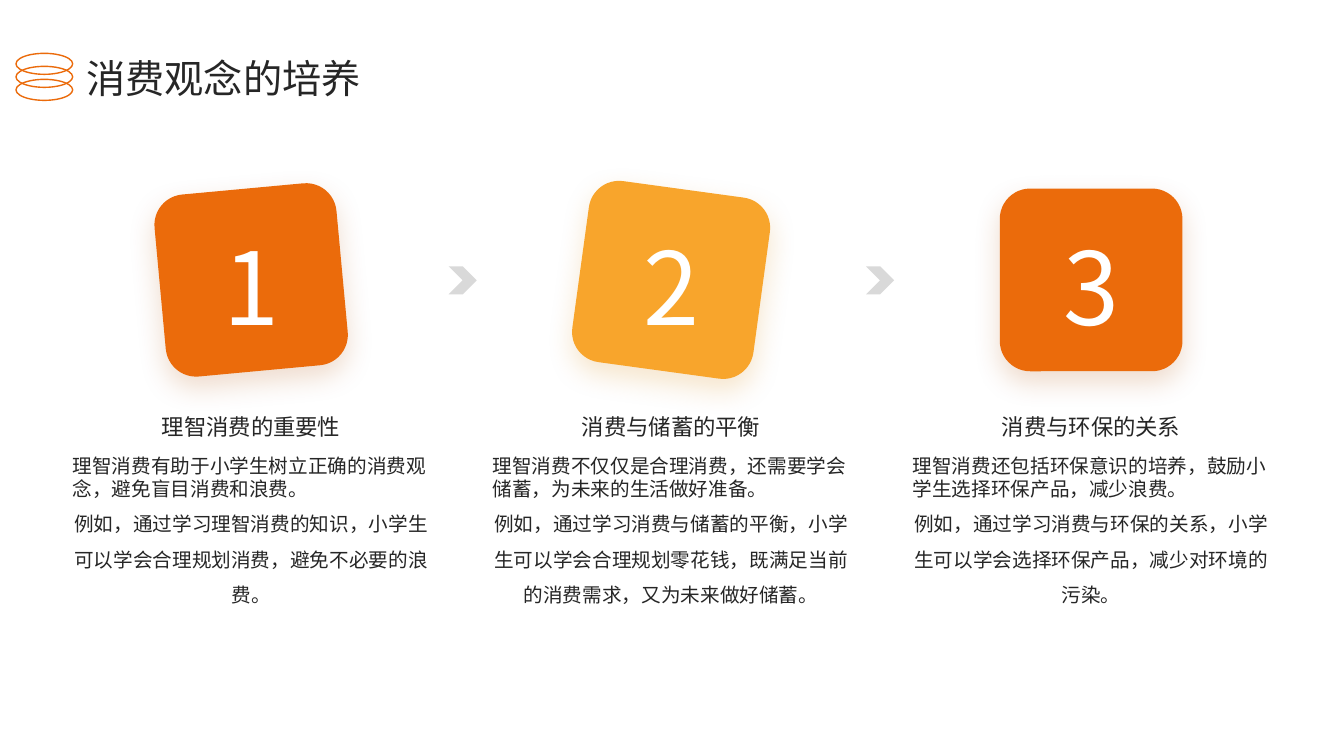
from dataclasses import dataclass

from lxml import etree
from pptx import Presentation
from pptx import util as u
from pptx.dml.color import RGBColor
from pptx.enum import shapes, text
from pptx.oxml import ns

FONT = "Noto Sans CJK SC"
INK = {"dark": "262626", "white": "FFFFFF", "grey": "D9D9D9",
       "orange": "EB6B0B", "amber": "F8A52C",
       "rust": "B05008", "ochre": "D48107"}
KIND = shapes.MSO_SHAPE
LEFT, MID = text.PP_ALIGN.LEFT, text.PP_ALIGN.CENTER

# The slide is a grid of 32 columns by 18 rows of square cells.
COLS, ROWS = 32, 18
WIDE, HIGH = u.Inches(13.333), u.Inches(7.5)
FIRST, STEP = 5.98, 10  # centre of the first card, and pitch of the cards


@dataclass
class Box:
    left: float
    top: float
    wide: float
    high: float

    def size(self) -> tuple[int, int, int, int]:
        """Turn grid cells into slide units."""
        return (round(self.left * WIDE / COLS), round(self.top * HIGH / ROWS),
                round(self.wide * WIDE / COLS), round(self.high * HIGH / ROWS))


@dataclass
class Card:
    head: str
    claim: str
    case: str
    fill: str
    shade: str
    turn: float


CARDS = [
    Card("理智消费的重要性",
         "理智消费有助于小学生树立正确的消费观念，避免盲目消费和浪费。",
         "例如，通过学习理智消费的知识，小学生可以学会合理规划消费，避免不必要的浪费。",
         "orange", "rust", 354.7),
    Card("消费与储蓄的平衡",
         "理智消费不仅仅是合理消费，还需要学会储蓄，为未来的生活做好准备。",
         "例如，通过学习消费与储蓄的平衡，小学生可以学会合理规划零花钱，既满足当前的消费需求，又为未来做好储蓄。",
         "amber", "ochre", 7.8),
    Card("消费与环保的关系",
         "理智消费还包括环保意识的培养，鼓励小学生选择环保产品，减少浪费。",
         "例如，通过学习消费与环保的关系，小学生可以学会选择环保产品，减少对环境的污染。",
         "orange", "rust", 0),
]


def tint(name: str) -> RGBColor:
    return RGBColor.from_string(INK[name])


def write(frame, words: str, size: float, ink: str = "dark", align=MID,
          lead: float = 1.1, more: bool = False) -> None:
    """Fill the frame's first paragraph, or add one when more is set."""
    para = frame.add_paragraph() if more else frame.paragraphs[0]
    para.alignment, para.line_spacing = align, lead
    run = para.add_run()
    run.text = words
    run.font.size, run.font.name = u.Pt(size), FONT
    run.font.color.rgb = tint(ink)
    east = etree.SubElement(run.font._element, ns.qn("a:ea"))
    east.set("typeface", FONT)


def frame_of(shape, anchor=text.MSO_ANCHOR.TOP):
    """Return the shape's text frame, wrapped and without margins."""
    frame = shape.text_frame
    frame.word_wrap, frame.auto_size = True, text.MSO_AUTO_SIZE.NONE
    frame.vertical_anchor = anchor
    frame.margin_left = frame.margin_right = 0
    frame.margin_top = frame.margin_bottom = 0
    return frame


def draw(parent, kind, box: Box, fill: str = "", line: str = ""):
    shape = parent.shapes.add_shape(kind, *box.size())
    shape.shadow.inherit = False
    if fill:
        shape.fill.solid()
        shape.fill.fore_color.rgb = tint(fill)
    else:
        shape.fill.background()
    if line:
        shape.line.color.rgb, shape.line.width = tint(line), u.Pt(1)
    else:
        shape.line.fill.background()
    return shape


def shade(shape, ink: str) -> None:
    """Cast a soft shadow straight down."""
    glow = shape._element.spPr.find(ns.qn("a:effectLst"))
    cast = etree.SubElement(glow, ns.qn("a:outerShdw"), blurRad=str(u.Pt(20)),
                            dist=str(u.Pt(8)), dir="5400000", algn="t",
                            rotWithShape="0")
    tone = etree.SubElement(cast, ns.qn("a:srgbClr"), val=INK[ink])
    etree.SubElement(tone, ns.qn("a:alpha"), val="20000")


def add_card(slide, rank: int, card: Card) -> None:
    def place(top: float, wide: float, high: float) -> Box:
        return Box(FIRST + STEP * rank - wide / 2, top, wide, high)

    def panel(box: Box, anchor=text.MSO_ANCHOR.TOP):
        return frame_of(slide.shapes.add_textbox(*box.size()), anchor)

    tile = draw(slide, KIND.ROUNDED_RECTANGLE, place(4.49, 4.35, 4.35), card.fill)
    tile.rotation = card.turn
    shade(tile, card.shade)
    body = panel(place(10.8, 8.5, 4.42))
    write(body, card.claim, 14, align=LEFT, lead=1.0)
    write(body, card.case, 14, lead=1.5, more=True)
    write(panel(place(9.77, 8.5, 1)), card.head, 16)
    digit = panel(place(5.2, 3.17, 2.9), text.MSO_ANCHOR.MIDDLE)
    write(digit, str(rank + 1), 72, ink="white")


def main() -> None:
    deck = Presentation()
    deck.slide_width, deck.slide_height = WIDE, HIGH
    slide = deck.slides.add_slide(deck.slide_layouts[5])

    title = slide.shapes.title
    title.left, title.top, title.width, title.height = Box(2.06, 1.18, 28, 1.22).size()
    write(frame_of(title, text.MSO_ANCHOR.MIDDLE), "消费观念的培养", 28, align=LEFT)

    for rank, card in enumerate(CARDS):
        add_card(slide, rank, card)
    for gap in range(len(CARDS) - 1):
        draw(slide, KIND.CHEVRON, Box(10.68 + 9.94 * gap, 6.34, 0.67, 0.67), "grey")

    rings = slide.shapes.add_group_shape()
    for ring in reversed(range(3)):
        draw(rings, KIND.OVAL, Box(0.38, 1.27 + 0.31 * ring, 1.35, 0.5), line="orange")

    deck.save("out.pptx")


if __name__ == "__main__":
    main()
